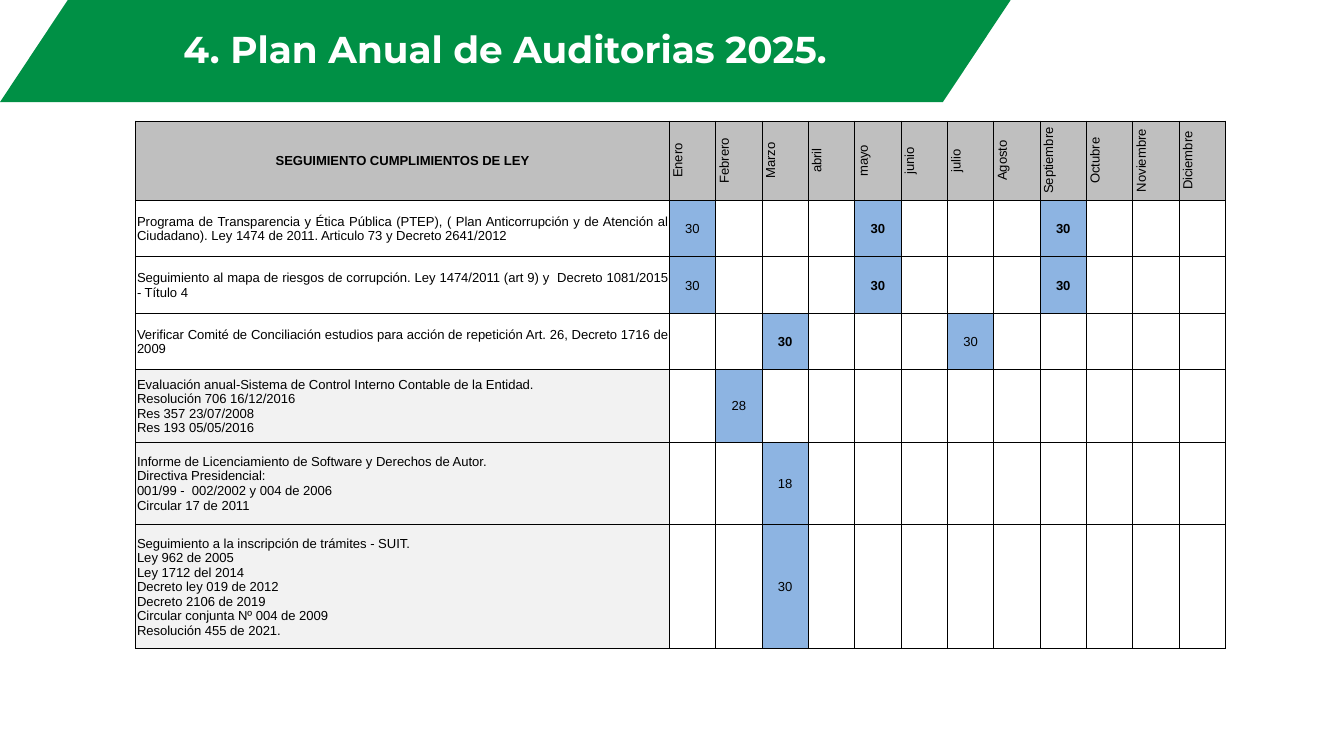
from dataclasses import dataclass

from lxml.etree import SubElement
from pptx import Presentation
from pptx.dml.color import RGBColor
from pptx.enum.shapes import MSO_SHAPE
from pptx.enum.text import MSO_ANCHOR, PP_ALIGN
from pptx.oxml.ns import qn
from pptx.util import Inches, Pt


@dataclass(frozen=True)
class Theme:
    green: str = "009045"
    white: str = "FFFFFF"
    black: str = "000000"
    head: str = "BFBFBF"
    pale: str = "F2F2F2"
    mark: str = "8DB4E2"
    title: float = 20
    body: float = 7
    line: float = 0.5


@dataclass(frozen=True)
class Box:
    left: float
    top: float
    width: float
    height: float

    def place(self):
        return [Inches(n) for n in (self.left, self.top, self.width, self.height)]


THEME = Theme()
LEFT, MID, FULL = PP_ALIGN.LEFT, PP_ALIGN.CENTER, PP_ALIGN.JUSTIFY

MONTHS = ("Enero", "Febrero", "Marzo", "abril", "mayo", "junio", "julio",
          "Agosto", "Septiembre", "Octubre", "Noviembre", "Diciembre")
HEAD_HIGH = 0.59
LABEL_WIDE = 3.97

# Height, label fill, alignment, label, {month: (day, bold)}
TASKS = (
    (0.42, THEME.white, FULL,
     "Programa de Transparencia y Ética Pública (PTEP), ( Plan Anticorrupción y de "
     "Atención al Ciudadano). Ley 1474 de 2011. Articulo 73 y Decreto 2641/2012",
     {"Enero": (30, False), "mayo": (30, True), "Septiembre": (30, True)}),
    (0.42, THEME.white, FULL,
     "Seguimiento al mapa de riesgos de corrupción. Ley 1474/2011 (art 9) y  "
     "Decreto 1081/2015 - Título 4",
     {"Enero": (30, False), "mayo": (30, True), "Septiembre": (30, True)}),
    (0.42, THEME.white, FULL,
     "Verificar Comité de Conciliación estudios para acción de repetición Art. 26, "
     "Decreto 1716 de 2009",
     {"Marzo": (30, True), "julio": (30, False)}),
    (0.54, THEME.pale, LEFT,
     "Evaluación anual-Sistema de Control Interno Contable de la Entidad.\n"
     "Resolución 706 16/12/2016\nRes 357 23/07/2008\nRes 193 05/05/2016",
     {"Febrero": (28, False)}),
    (0.61, THEME.pale, LEFT,
     "Informe de Licenciamiento de Software y Derechos de Autor.\n"
     "Directiva Presidencial:\n001/99 -  002/2002 y 004 de 2006\nCircular 17 de 2011",
     {"Marzo": (18, False)}),
    (0.93, THEME.pale, LEFT,
     "Seguimiento a la inscripción de trámites - SUIT.\nLey 962 de 2005\n"
     "Ley 1712 del 2014\nDecreto ley 019 de 2012\nDecreto 2106 de 2019\n"
     "Circular conjunta Nº 004 de 2009\nResolución 455 de 2021.",
     {"Marzo": (30, False)}),
)


def write(frame, text, size=THEME.body, face="Arial", color=THEME.black,
          bold=False, align=MID, space=1.0):
    para = frame.paragraphs[0]
    para.text = text
    para.alignment = align
    para.line_spacing = space
    for font in [para.font] + [run.font for run in para.runs]:
        font.size, font.name, font.bold = Pt(size), face, bold
        font.color.rgb = RGBColor.from_string(color)


def paint(shape, color):
    shape.fill.solid()
    shape.fill.fore_color.rgb = RGBColor.from_string(color)


def frame_cell(cell):
    props = cell._tc.get_or_add_tcPr()
    for side in ("a:lnL", "a:lnR", "a:lnT", "a:lnB"):
        line = SubElement(props, qn(side), w=str(Pt(THEME.line)))
        fill = SubElement(line, qn("a:solidFill"))
        SubElement(fill, qn("a:srgbClr"), val=THEME.black)


def fill_cell(cell, text="", fill=THEME.white, turn=False, **style):
    cell.margin_left = cell.margin_right = cell.margin_top = Inches(0.01)
    cell.margin_bottom = 0
    cell.vertical_anchor = MSO_ANCHOR.MIDDLE
    frame_cell(cell)
    paint(cell, fill)
    if turn:
        cell._tc.tcPr.set("vert", "vert270")
    write(cell.text_frame, text, **style)


def add_banner(slide, box):
    shape = slide.shapes.add_shape(MSO_SHAPE.PARALLELOGRAM, *box.place())
    shape.adjustments[0] = 0.664
    shape.shadow.inherit = False
    shape.line.fill.background()
    paint(shape, THEME.green)
    frame = shape.text_frame
    frame.word_wrap = True
    frame.vertical_anchor = MSO_ANCHOR.MIDDLE
    frame.margin_left = frame.margin_right = Inches(0.07)
    frame.margin_top = frame.margin_bottom = Inches(0.04)
    write(frame, "4. Plan Anual de Auditorias 2025.", size=THEME.title,
          face="Montserrat", color=THEME.white, bold=True, space=0.9)


def add_plan(slide, box):
    table = slide.shapes.add_table(len(TASKS) + 1, len(MONTHS) + 1, *box.place()).table
    table.first_row = table.horz_banding = False

    # Grid sizes
    month_wide = (box.width - LABEL_WIDE) / len(MONTHS)
    for col, wide in zip(table.columns, [LABEL_WIDE] + [month_wide] * len(MONTHS)):
        col.width = Inches(wide)
    for row, high in zip(table.rows, [HEAD_HIGH] + [task[0] for task in TASKS]):
        row.height = Inches(high)

    # Header row
    fill_cell(table.cell(0, 0), "SEGUIMIENTO CUMPLIMIENTOS DE LEY",
              fill=THEME.head, bold=True)
    for c, month in enumerate(MONTHS, 1):
        fill_cell(table.cell(0, c), month, fill=THEME.head, turn=True)

    # Tasks and their due days
    for r, (_, fill, align, label, days) in enumerate(TASKS, 1):
        fill_cell(table.cell(r, 0), label, fill=fill, align=align)
        for c, month in enumerate(MONTHS, 1):
            cell = table.cell(r, c)
            if month in days:
                day, bold = days[month]
                fill_cell(cell, str(day), fill=THEME.mark, bold=bold)
            else:
                fill_cell(cell)


def main():
    deck = Presentation()
    # Widescreen, 16 to 9
    deck.slide_width = Inches(10)
    deck.slide_height = Inches(10 * 9 / 16)
    slide = deck.slides.add_slide(deck.slide_layouts[6])
    add_banner(slide, Box(0, 0, 7.52, 0.76))
    add_plan(slide, Box(1.01, 0.9, 8.11, 3.93))
    deck.save("out.pptx")


if __name__ == "__main__":
    main()
